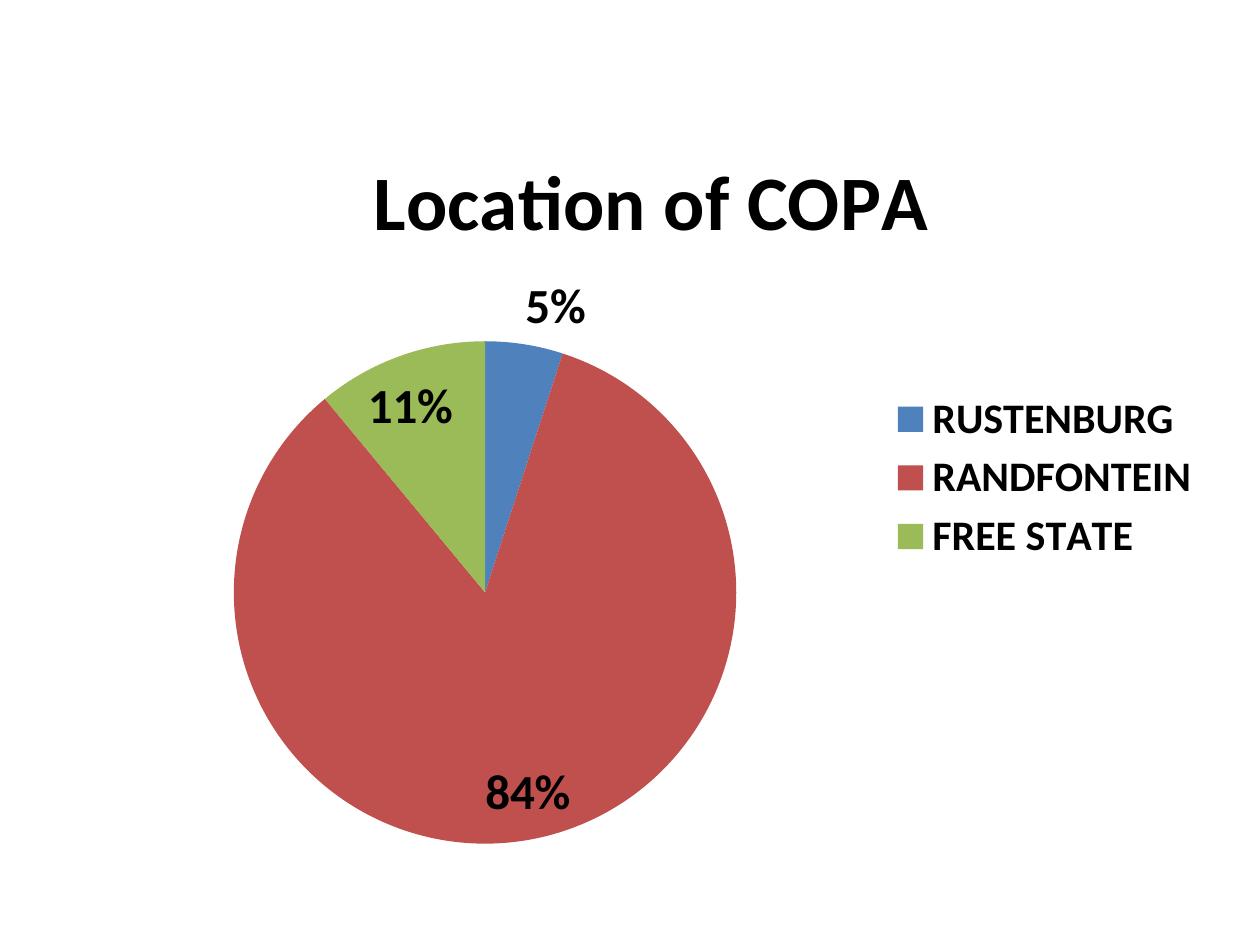
from lxml import etree
from pptx import Presentation, util as u
from pptx.chart.data import CategoryChartData
from pptx.dml.color import RGBColor
from pptx.enum import chart as ch
from pptx.oxml.ns import qn

PX = u.Inches(1) // 126
BLACK = RGBColor(0x00, 0x00, 0x00)
BLUE = RGBColor(0x4F, 0x81, 0xBD)
RED = RGBColor(0xC0, 0x50, 0x4D)
GREEN = RGBColor(0x9B, 0xBB, 0x59)
LOCATIONS = [("RUSTENBURG", 5, BLUE), ("RANDFONTEIN", 84, RED), ("FREE STATE", 11, GREEN)]


def set_font(font, size):
    font.name = "Calibri"
    font.size = u.Pt(size)
    font.bold = True
    font.color.rgb = BLACK


def set_layout(element, index, inner=False, **fractions):
    """Place a chart part by fractions of the chart; index is its layout's slot."""
    for old in element.findall(qn("c:layout")):
        element.remove(old)
    layout = etree.Element(qn("c:layout"))
    manual = etree.SubElement(layout, qn("c:manualLayout"))
    if inner:
        etree.SubElement(manual, qn("c:layoutTarget")).set("val", "inner")
    for axis in ("x", "y"):
        etree.SubElement(manual, qn(f"c:{axis}Mode")).set("val", "edge")
    for name, value in fractions.items():
        etree.SubElement(manual, qn(f"c:{name}")).set("val", str(value))
    element.insert(index, layout)


def add_location_pie(s, left, top, width, height):
    data = CategoryChartData()
    data.categories = [name for name, _, _ in LOCATIONS]
    data.add_series("Series 1", [value for _, value, _ in LOCATIONS])
    box = [u.Emu(n * PX) for n in (left, top, width, height)]
    chart = s.shapes.add_chart(ch.XL_CHART_TYPE.PIE, *box, data).chart
    set_font(chart.font, 10)

    chart.has_title = True
    p = chart.chart_title.text_frame.paragraphs[0]
    r = p.add_run()
    r.text = "Location of COPA"
    set_font(r.font, 44)
    chart.chart_title.include_in_layout = False

    chart.has_legend = True
    legend = chart.legend
    legend.position = ch.XL_LEGEND_POSITION.RIGHT
    legend.include_in_layout = False
    set_font(legend.font, 24)

    plot = chart.plots[0]
    plot.vary_by_categories = True
    for i, (_, _, color) in enumerate(LOCATIONS):
        fill = plot.series[0].points[i].format.fill
        fill.solid()
        fill.fore_color.rgb = color

    plot.has_data_labels = True
    labels = plot.data_labels
    labels.show_value = False
    labels.show_percentage = True
    labels.number_format = "0%"
    labels.number_format_is_linked = False
    labels.position = ch.XL_LABEL_POSITION.BEST_FIT
    set_font(labels.font, 28)

    root = chart.element.find(qn("c:chart"))
    set_layout(root.find(qn("c:title")), 1, x=0.25, y=0.05)
    set_layout(root.find(qn("c:plotArea")), 0, inner=True, x=0.14, y=0.32, w=0.44, h=0.66)
    set_layout(root.find(qn("c:legend")), 1, x=0.71, y=0.38, w=0.28, h=0.24)


def main():
    prs = Presentation()
    prs.slide_width, prs.slide_height = u.Emu(1260 * PX), u.Emu(945 * PX)
    s = prs.slides.add_slide(prs.slide_layouts[6])
    add_location_pie(s, 74, 96, 1142, 764)
    prs.save("out.pptx")


if __name__ == "__main__":
    main()
